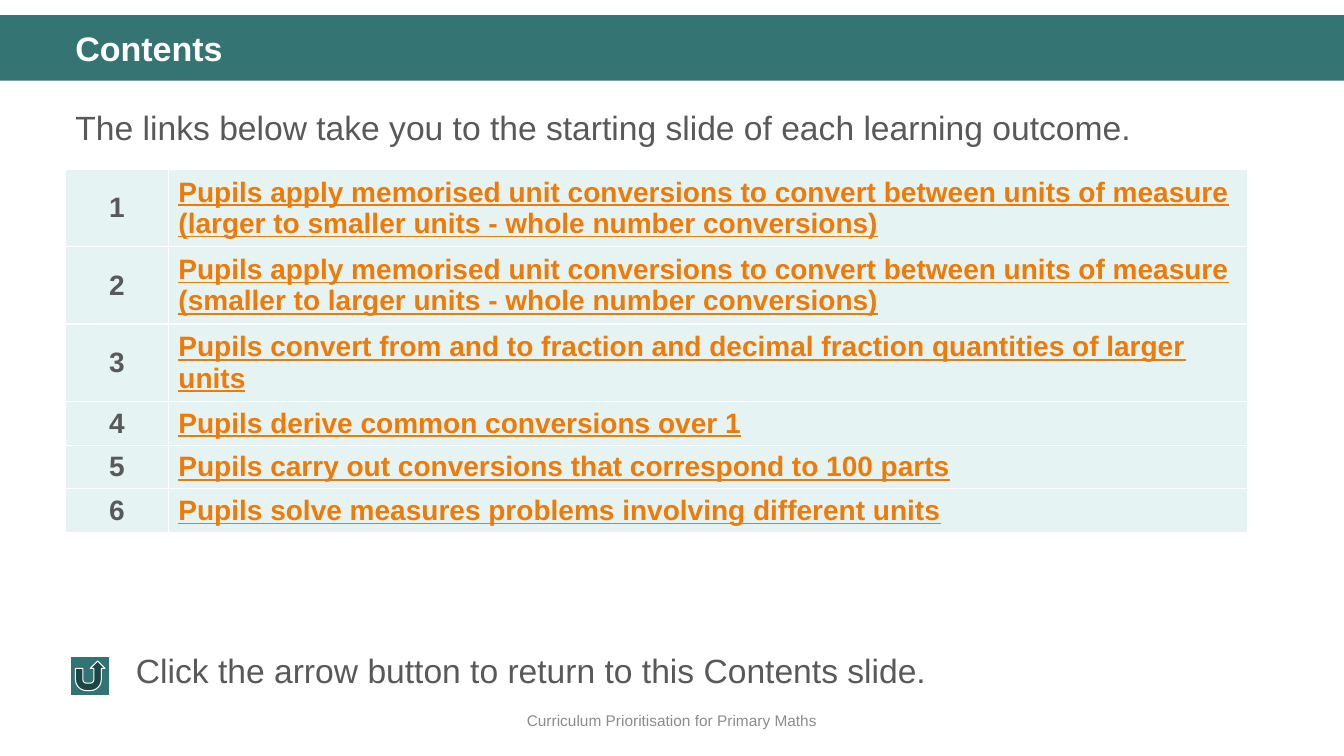
from lxml.etree import SubElement
from pptx import Presentation
from pptx.dml.color import RGBColor
from pptx.enum.shapes import MSO_SHAPE
from pptx.enum.text import MSO_ANCHOR, PP_ALIGN
from pptx.oxml.ns import qn
from pptx.util import Inches, Pt

TEAL = RGBColor(0x34, 0x75, 0x74)
BUTTON = RGBColor(0x32, 0x74, 0x73)
MINT = RGBColor(0xE5, 0xF3, 0xF2)
ORANGE = RGBColor(0xEE, 0x7B, 0x08)
GREY = RGBColor(0x59, 0x59, 0x59)
PALE = RGBColor(0x8C, 0x8C, 0x8C)
WHITE = RGBColor(0xFF, 0xFF, 0xFF)


def write(frame, text, size=24, color=GREY, bold=False, line=False,
          align=PP_ALIGN.LEFT, anchor=MSO_ANCHOR.TOP, space=1.0):
    frame.word_wrap = True
    frame.vertical_anchor = anchor
    par = frame.paragraphs[0]
    par.alignment = align
    par.line_spacing = space
    run = par.add_run()
    run.text = text
    font = run.font
    font.name = "Arial"
    font.size = Pt(size)
    font.bold = bold
    font.underline = line
    font.color.rgb = color


deck = Presentation()
deck.slide_width = Inches(13.33)
deck.slide_height = Inches(7.5)
slide = deck.slides.add_slide(deck.slide_layouts[6])
shapes = slide.shapes

band = shapes.add_shape(MSO_SHAPE.RECTANGLE, 0, Inches(0.15), Inches(13.33), Inches(0.65))
band.shadow.inherit = False
band.fill.solid()
band.fill.fore_color.rgb = TEAL
band.line.fill.background()

labels = [
    ("Contents", (0.65, 0.27, 12.18, 0.47),
     dict(size=24.3, color=WHITE, bold=True, space=0.9)),
    ("The links below take you to the starting slide of each learning outcome.",
     (0.65, 0.93, 12.18, 0.6), dict(space=1.2)),
    ("Click the arrow button to return to this Contents slide.",
     (1.25, 6.4, 11.32, 0.5), {}),
    ("Curriculum Prioritisation for Primary Maths", (0, 6.95, 13.33, 0.4),
     dict(size=11, color=PALE, align=PP_ALIGN.CENTER, anchor=MSO_ANCHOR.MIDDLE)),
]
for text, place, style in labels:
    box = shapes.add_textbox(*[Inches(n) for n in place])
    write(box.text_frame, text, **style)

goals = [
    ("Pupils apply memorised unit conversions to convert between units of measure "
     "(larger to smaller units - whole number conversions)", 0.72),
    ("Pupils apply memorised unit conversions to convert between units of measure "
     "(smaller to larger units - whole number conversions)", 0.72),
    ("Pupils convert from and to fraction and decimal fraction quantities of larger units", 0.72),
    ("Pupils derive common conversions over 1", 0.41),
    ("Pupils carry out conversions that correspond to 100 parts", 0.41),
    ("Pupils solve measures problems involving different units", 0.41),
]
total = sum(height for goal, height in goals)
table = shapes.add_table(len(goals), 2, Inches(0.65), Inches(1.68),
                         Inches(11.72), Inches(total)).table
table.first_row = False
table.horz_banding = False
table.columns[0].width = Inches(1.02)
table.columns[1].width = Inches(10.7)

for row, (goal, height) in enumerate(goals):
    table.rows[row].height = Inches(height)
    pair = [
        (str(row + 1), dict(align=PP_ALIGN.CENTER)),
        (goal, dict(color=ORANGE, line=True)),
    ]
    for col, (text, style) in enumerate(pair):
        cell = table.cell(row, col)
        write(cell.text_frame, text, size=20, bold=True, **style)
        cell.vertical_anchor = MSO_ANCHOR.MIDDLE
        props = cell._tc.get_or_add_tcPr()
        for side in ("a:lnL", "a:lnR", "a:lnT", "a:lnB"):
            edge = SubElement(props, qn(side), w=str(Pt(1)))
            paint = SubElement(edge, qn("a:solidFill"))
            SubElement(paint, qn("a:srgbClr"), val=str(WHITE))
        cell.fill.solid()
        cell.fill.fore_color.rgb = MINT

button = shapes.add_shape(MSO_SHAPE.ACTION_BUTTON_RETURN, Inches(0.7), Inches(6.51),
                          Inches(0.39), Inches(0.39))
button.shadow.inherit = False
button.fill.solid()
button.fill.fore_color.rgb = BUTTON
button.line.color.rgb = WHITE
button.line.width = Pt(0.75)

deck.save("out.pptx")
